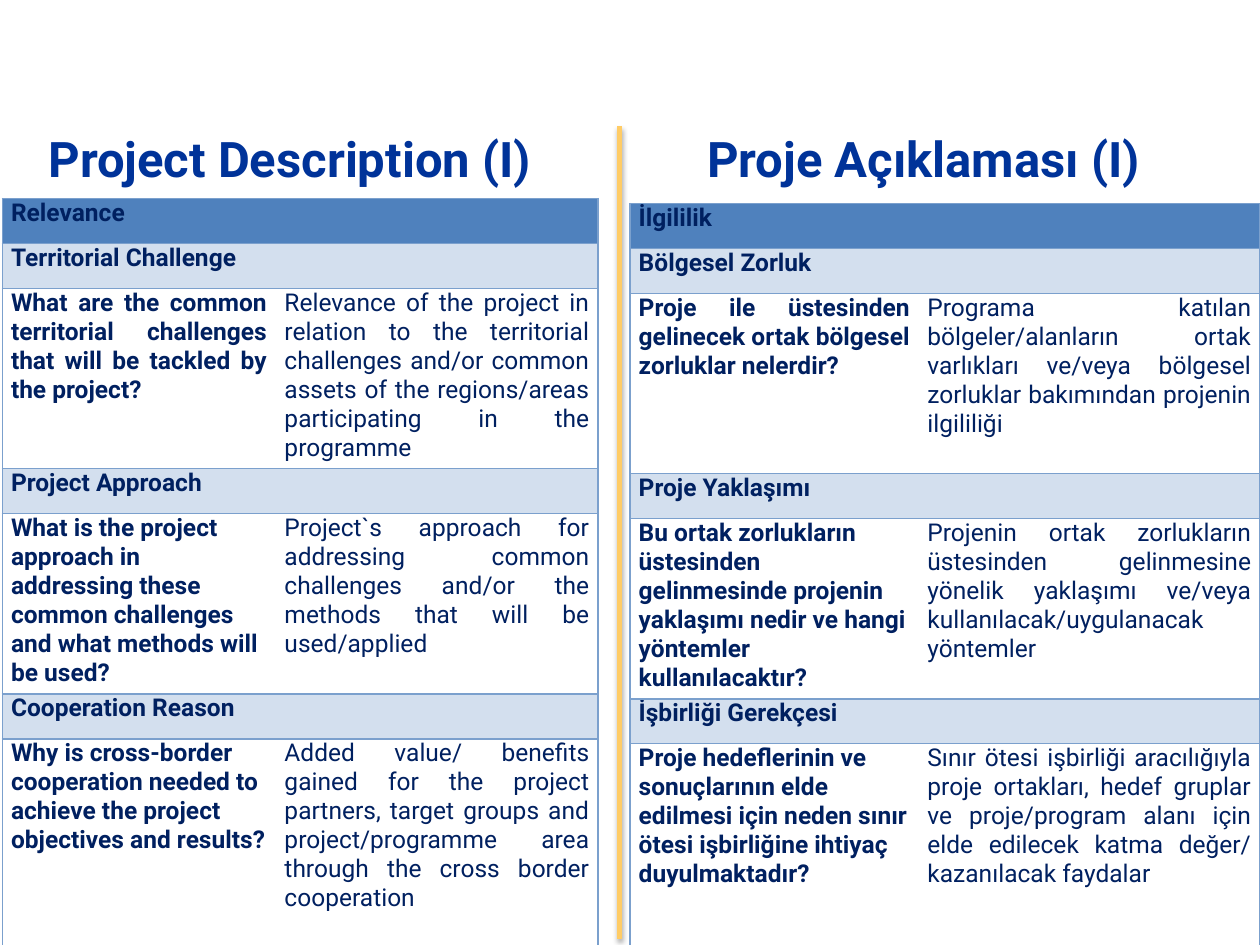
from lxml import etree
from pptx import Presentation
from pptx.dml.color import RGBColor
from pptx.enum.shapes import MSO_CONNECTOR
from pptx.enum.text import MSO_ANCHOR, PP_ALIGN
from pptx.oxml.ns import qn
from pptx.util import Pt

CENTER, JUSTIFY, LEFT = PP_ALIGN.CENTER, PP_ALIGN.JUSTIFY, PP_ALIGN.LEFT
MIDDLE = MSO_ANCHOR.MIDDLE
STRAIGHT = MSO_CONNECTOR.STRAIGHT

FONT = "Roboto"
COLORS = {
    "title": "003399",
    "text": "002060",
    "header": "4F81BD",
    "section": "D3DFEE",
    "border": "7BA0CD",
    "divider": "FFCC66",
    "shadow": "000000",
}
HEADING_HEIGHT = 25.7
QUESTION_HEIGHTS = [103, 103, 118]

ENGLISH = {
    "title": "Project Description (I)",
    "header": "Relevance",
    "sections": [
        ("Territorial Challenge",
         "What are the common territorial challenges that will be tackled by the project?",
         "Relevance of the project in relation to the territorial challenges and/or common "
         "assets of the regions/areas participating in the programme"),
        ("Project Approach",
         "What is the project approach in addressing these common challenges and what "
         "methods will be used?",
         "Project`s approach for addressing common challenges and/or the methods that "
         "will be used/applied"),
        ("Cooperation Reason",
         "Why is cross-border cooperation needed to achieve the project objectives and results?",
         "Added value/ benefits gained for the project partners, target groups and "
         "project/programme area through the cross border cooperation"),
    ],
}
TURKISH = {
    "title": "Proje Açıklaması (I)",
    "header": "İlgililik",
    "sections": [
        ("Bölgesel Zorluk",
         "Proje ile üstesinden gelinecek ortak bölgesel zorluklar nelerdir?",
         "Programa katılan bölgeler/alanların ortak varlıkları ve/veya bölgesel zorluklar "
         "bakımından projenin ilgililiği"),
        ("Proje Yaklaşımı",
         "Bu ortak zorlukların üstesinden gelinmesinde projenin yaklaşımı nedir ve hangi "
         "yöntemler kullanılacaktır?",
         "Projenin ortak zorlukların üstesinden gelinmesine yönelik yaklaşımı ve/veya "
         "kullanılacak/uygulanacak yöntemler"),
        ("İşbirliği Gerekçesi",
         "Proje hedeflerinin ve sonuçlarının elde edilmesi için neden sınır ötesi "
         "işbirliğine ihtiyaç duyulmaktadır?",
         "Sınır ötesi işbirliği aracılığıyla proje ortakları, hedef gruplar ve "
         "proje/program alanı için elde edilecek katma değer/ kazanılacak faydalar"),
    ],
}


def color(name):
    return RGBColor.from_string(COLORS[name])


def style_paragraph(para, size, name, bold, alignment):
    para.alignment = alignment
    para.font.name = FONT
    para.font.size = Pt(size)
    para.font.bold = bold
    para.font.color.rgb = color(name)


def add_title(page, text, left, top, width, height):
    box = page.shapes.add_textbox(Pt(left), Pt(top), Pt(width), Pt(height))
    frame = box.text_frame
    frame.word_wrap = True
    frame.vertical_anchor = MIDDLE
    frame.text = text
    style_paragraph(frame.paragraphs[0], 28, "title", True, CENTER)


def set_borders(cell, sides):
    properties = cell._tc.get_or_add_tcPr()
    for side in "LRTB":
        line = etree.SubElement(properties, qn(f"a:ln{side}"), w=str(Pt(1)))
        if side in sides:
            fill = etree.SubElement(line, qn("a:solidFill"))
            etree.SubElement(fill, qn("a:srgbClr"), val=COLORS["border"])
        else:
            etree.SubElement(line, qn("a:noFill"))


def style_cell(cell, sides, fill=None):
    cell.margin_left = cell.margin_right = Pt(5)
    cell.margin_top = cell.margin_bottom = 0
    set_borders(cell, sides)
    if fill:
        cell.fill.solid()
        cell.fill.fore_color.rgb = color(fill)
    else:
        cell.fill.background()


def write_cell(cell, text, bold, alignment):
    cell.text = text
    style_paragraph(cell.text_frame.paragraphs[0], 14, "text", bold, alignment)


def fill_heading(table, row, text, fill):
    first, second = table.cell(row, 0), table.cell(row, 1)
    first.merge(second)
    for cell in (first, second):
        style_cell(cell, "LRTB", fill)
    write_cell(first, text, True, JUSTIFY)


def add_question_table(page, content, left, top, widths):
    heights = [HEADING_HEIGHT]
    for height in QUESTION_HEIGHTS:
        heights += [HEADING_HEIGHT, height]
    table = page.shapes.add_table(len(heights), 2, Pt(left), Pt(top),
                                  Pt(sum(widths)), Pt(sum(heights))).table
    table.first_row = table.horz_banding = False
    for column, width in zip(table.columns, widths):
        column.width = Pt(width)
    for row, height in zip(table.rows, heights):
        row.height = Pt(height)

    fill_heading(table, 0, content["header"], "header")
    for index, (heading, question, answer) in enumerate(content["sections"]):
        row = 1 + 2 * index
        fill_heading(table, row, heading, "section")
        question_cell, answer_cell = table.cell(row + 1, 0), table.cell(row + 1, 1)
        style_cell(question_cell, "LTB")
        style_cell(answer_cell, "RTB")
        write_cell(question_cell, question, True, JUSTIFY if index == 0 else LEFT)
        write_cell(answer_cell, answer, False, JUSTIFY)


def add_divider(page, x, top, bottom):
    line = page.shapes.add_connector(STRAIGHT, Pt(x), Pt(top), Pt(x), Pt(bottom))
    line.line.color.rgb = color("divider")
    line.line.width = Pt(3)
    effects = etree.SubElement(line._element.spPr, qn("a:effectLst"))
    shadow = etree.SubElement(effects, qn("a:outerShdw"), blurRad=str(Pt(3.1)),
                              dist=str(Pt(1.8)), dir="5400000", rotWithShape="0")
    tint = etree.SubElement(shadow, qn("a:srgbClr"), val=COLORS["shadow"])
    etree.SubElement(tint, qn("a:alpha"), val="35000")


def main():
    deck = Presentation()
    deck.slide_width, deck.slide_height = Pt(720), Pt(540)
    page = deck.slides.add_slide(deck.slide_layouts[6])
    add_title(page, ENGLISH["title"], 3.6, 72, 324, 36)
    add_question_table(page, ENGLISH, 1.3, 113.5, [156.3, 184.2])
    add_title(page, TURKISH["title"], 365.8, 72, 324, 36)
    add_question_table(page, TURKISH, 360, 116.3, [165, 195])
    add_divider(page, 354.2, 72, 536.4)
    deck.save("out.pptx")


if __name__ == "__main__":
    main()
